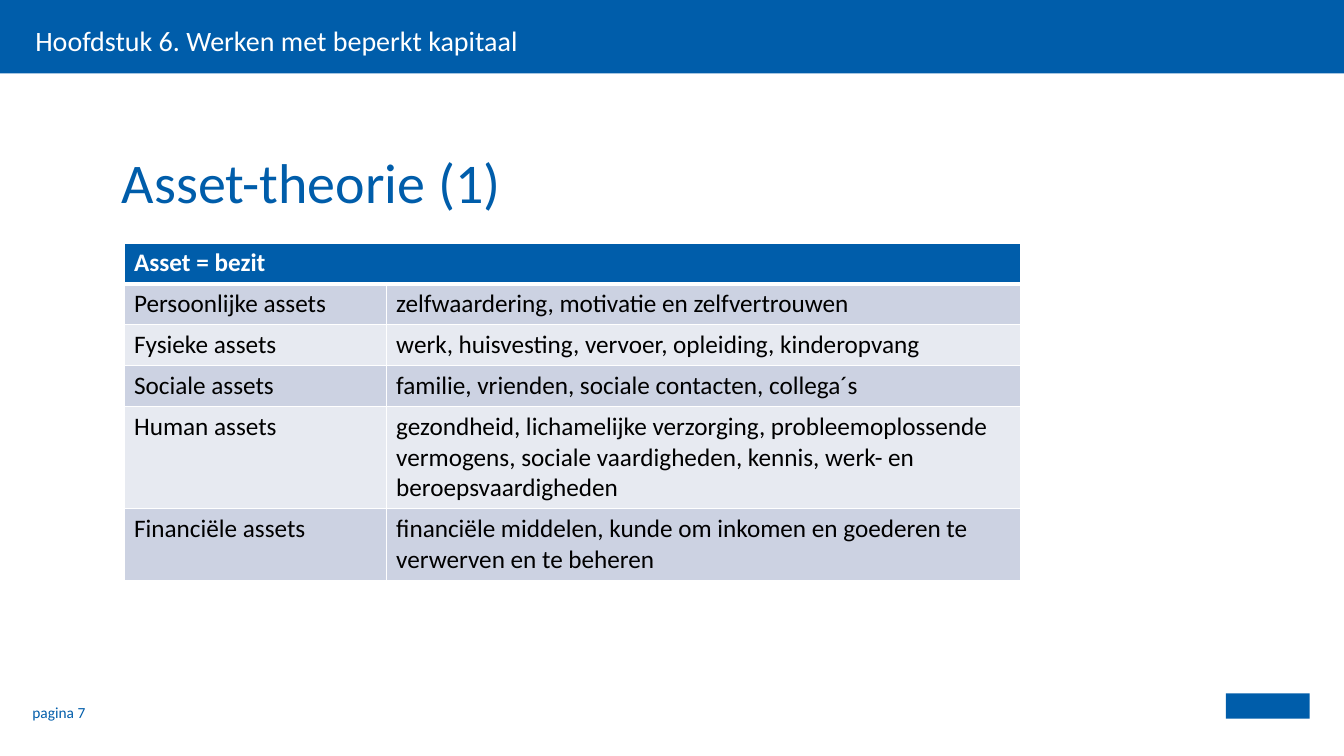
from dataclasses import dataclass

from lxml.etree import SubElement
from pptx import Presentation
from pptx.dml.color import RGBColor
from pptx.enum.shapes import MSO_SHAPE as Preset
from pptx.enum.text import MSO_ANCHOR as Anchor, MSO_AUTO_SIZE as AutoSize, PP_ALIGN as Align
from pptx.oxml import parse_xml
from pptx.oxml.ns import nsdecls, qn
from pptx.util import Emu, Pt

EMU_PER_PX = 9144
BLUE = RGBColor(0x00, 0x5D, 0xAA)
WHITE = RGBColor(0xFF, 0xFF, 0xFF)
BLACK = RGBColor(0x00, 0x00, 0x00)
BANDS = (RGBColor(0xCC, 0xD2, 0xE2), RGBColor(0xE7, 0xEA, 0xF1))


@dataclass(frozen=True)
class Box:
    left: int
    top: int
    width: int
    height: int

    def emu(self) -> tuple[Emu, ...]:
        return tuple(map(px, (self.left, self.top, self.width, self.height)))


@dataclass(frozen=True)
class AssetRow:
    kind: str
    examples: str
    height: int


ASSET_ROWS = (
    AssetRow("Persoonlijke assets", "zelfwaardering, motivatie en zelfvertrouwen", 40),
    AssetRow("Fysieke assets", "werk, huisvesting, vervoer, opleiding, kinderopvang", 40),
    AssetRow("Sociale assets", "familie, vrienden, sociale contacten, collega´s", 40),
    AssetRow(
        "Human assets",
        "gezondheid, lichamelijke verzorging, probleemoplossende vermogens, "
        "sociale vaardigheden, kennis, werk- en beroepsvaardigheden",
        101,
    ),
    AssetRow(
        "Financiële assets",
        "financiële middelen, kunde om inkomen en goederen te verwerven en te beheren",
        71,
    ),
)
HEADING_HEIGHT = 40
COLUMN_WIDTHS = (260, 629)


def px(length: int) -> Emu:
    return Emu(length * EMU_PER_PX)


def write(frame, text: str, *, size: int, color: RGBColor, bold: bool = False,
          line_spacing: float = 1.0) -> None:
    frame.text = text
    paragraph = frame.paragraphs[0]
    paragraph.alignment = Align.LEFT
    paragraph.line_spacing = line_spacing
    paragraph.space_before = Pt(0)
    font = paragraph.runs[0].font
    font.name = "Calibri"
    font.size = Pt(size)
    font.bold = bold
    font.color.rgb = color


def place(holder, box: Box, anchor: Anchor) -> None:
    holder.left, holder.top, holder.width, holder.height = box.emu()
    frame = holder.text_frame
    frame.word_wrap = True
    frame.auto_size = AutoSize.NONE
    frame.vertical_anchor = anchor
    frame.margin_left = frame.margin_top = frame.margin_right = frame.margin_bottom = 0


def remove_bullet(paragraph) -> None:
    properties = paragraph._p.get_or_add_pPr()
    properties.set("marL", "0")
    properties.set("indent", "0")
    SubElement(properties, qn("a:buNone"))


def add_block(slide, box: Box):
    block = slide.shapes.add_shape(Preset.RECTANGLE, *box.emu())
    block.shadow.inherit = False
    block.fill.solid()
    block.fill.fore_color.rgb = BLUE
    block.line.fill.background()
    return block


def style_cell(cell, fill: RGBColor, top: int = 1, bottom: int = 1) -> None:
    cell.fill.solid()
    cell.fill.fore_color.rgb = fill
    borders = {"lnL": 1, "lnR": 1, "lnT": top, "lnB": bottom}
    for position, (side, width) in enumerate(borders.items()):
        border = parse_xml(
            f'<a:{side} {nsdecls("a")} w="{Pt(width)}"><a:solidFill>'
            f'<a:srgbClr val="{WHITE}"/></a:solidFill></a:{side}>'
        )
        cell._tc.get_or_add_tcPr().insert(position, border)


def add_asset_table(slide) -> None:
    heights = (HEADING_HEIGHT, *(row.height for row in ASSET_ROWS))
    box = Box(123, 241, sum(COLUMN_WIDTHS), sum(heights))
    table = slide.shapes.add_table(len(heights), len(COLUMN_WIDTHS), *box.emu()).table
    for column, width in zip(table.columns, COLUMN_WIDTHS):
        column.width = px(width)
    for table_row, height in zip(table.rows, heights):
        table_row.height = px(height)

    for cell in table.rows[0].cells:
        style_cell(cell, BLUE, bottom=3)
    heading = table.cell(0, 0)
    heading.merge(table.cell(0, 1))
    write(heading.text_frame, "Asset = bezit", size=18, color=WHITE, bold=True)

    for number, asset in enumerate(ASSET_ROWS):
        for column, text in enumerate((asset.kind, asset.examples)):
            cell = table.cell(number + 1, column)
            style_cell(cell, BANDS[number % 2], top=1 if number else 3)
            write(cell.text_frame, text, size=18, color=BLACK)


def main() -> None:
    deck = Presentation()
    deck.slide_width, deck.slide_height = px(1333), px(750)
    slide = deck.slides.add_slide(deck.slide_layouts[1])
    title, chapter = slide.placeholders

    header_bar = add_block(slide, Box(0, 0, 1333, 73))
    title.element.addprevious(header_bar.element)
    add_block(slide, Box(1216, 688, 83, 25))

    place(title, Box(121, 110, 1142, 103), Anchor.BOTTOM)
    write(title.text_frame, "Asset-theorie (1)", size=40, color=BLUE)

    place(chapter, Box(35, 21, 514, 39), Anchor.TOP)
    write(chapter.text_frame, "Hoofdstuk 6. Werken met beperkt kapitaal",
          size=20, color=WHITE, line_spacing=1.08)
    remove_bullet(chapter.text_frame.paragraphs[0])

    page_box = Box(32, 687, 142, 40)
    page_number = slide.shapes.add_textbox(*page_box.emu())
    place(page_number, page_box, Anchor.MIDDLE)
    write(page_number.text_frame, "pagina 7", size=11, color=BLUE)

    add_asset_table(slide)
    deck.save("out.pptx")


if __name__ == "__main__":
    main()
